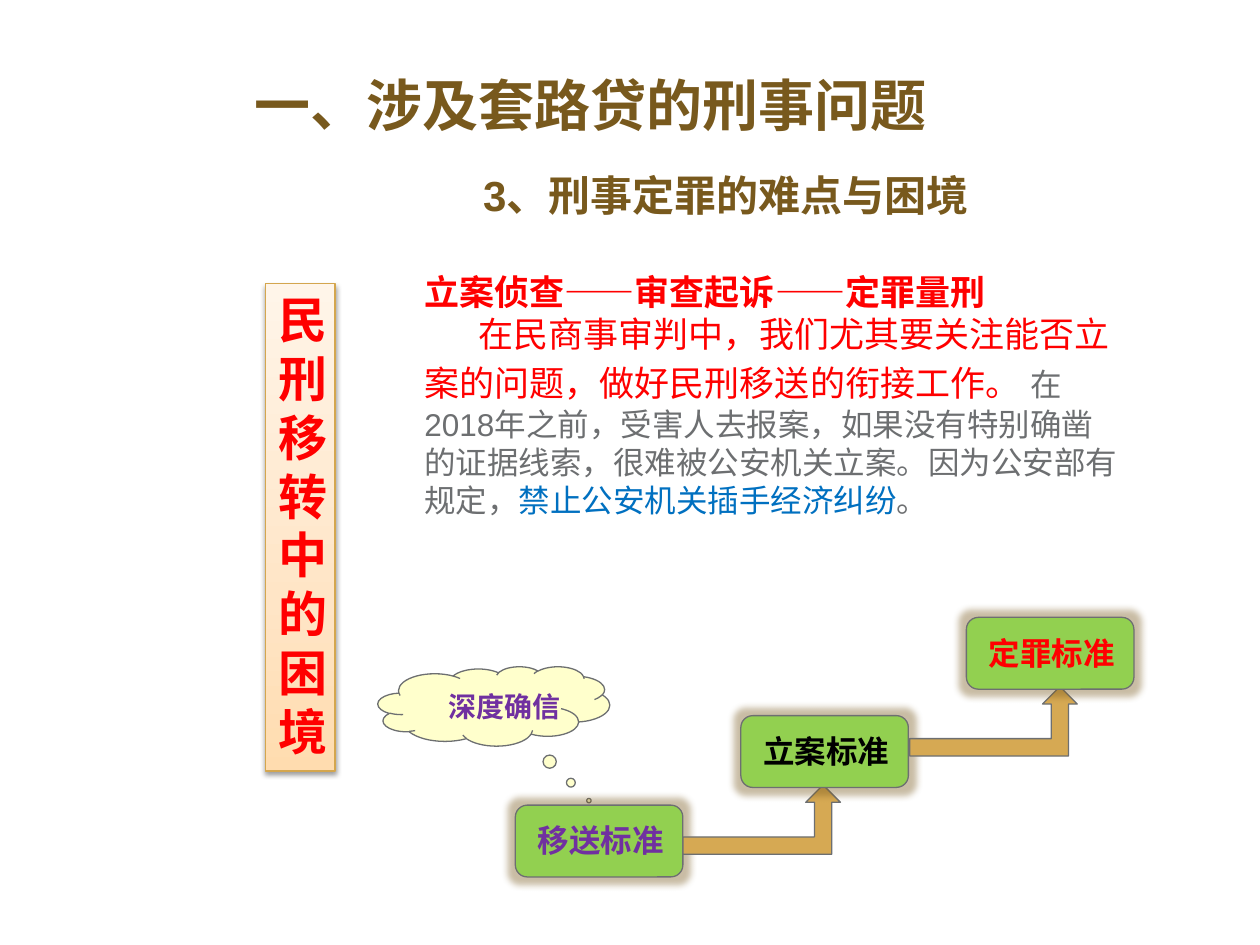
"""Build a slide on the difficulties of criminal conviction in trap-loan cases."""
from lxml import etree
from pptx import Presentation
from pptx.dml.color import RGBColor
from pptx.enum import shapes, text
from pptx.oxml import parse_xml
from pptx.oxml.ns import nsdecls, qn
from pptx.util import Inches, Pt

BROWN = RGBColor(0x78, 0x59, 0x1D)
RED = RGBColor(0xFF, 0, 0)
GRAY = RGBColor(0x6D, 0x6F, 0x71)
BLUE = RGBColor(0, 0x70, 0xC0)
PURPLE = RGBColor(0x70, 0x30, 0xA0)
BLACK = RGBColor(0, 0, 0)
GREEN = RGBColor(0x92, 0xD0, 0x50)
GOLD = RGBColor(0xD6, 0xA9, 0x53)
GOLD_LINE = RGBColor(0xD4, 0xA6, 0x4E)
CREAM = RGBColor(0xFF, 0xFF, 0xCC)

TITLE = "一、涉及套路贷的刑事问题"
SUBTITLE = "3、刑事定罪的难点与困境"
BANNER = "民刑移转中的困境"
THOUGHT = "深度确信"
BODY = [
    [("立案侦查——审查起诉——定罪量刑", 20, RED, True)],
    [
        ("在民商事审判中，我们尤其要关注能否立案的问题，做好民刑移送的衔接工作。", 20, RED, False),
        (" ", 24, GRAY, False),
        ("在2018年之前，受害人去报案，如果没有特别确凿的证据线索，很难被公安机关立案。因为公安部有规定，",
         18, GRAY, False),
        ("禁止公安机关插手经济纠纷", 18, BLUE, False),
        ("。", 18, GRAY, False),
    ],
]
STEPS = [("移送标准", PURPLE, 6.39), ("立案标准", BLACK, 5.68), ("定罪标准", RED, 4.9)]
ARROWS = [(5.42, 6.23, 1.25, 0.55), (7.22, 5.45, 1.33, 0.55)]
STEP_LEFT, STEP_PITCH = 4.09, 1.79
BANNER_STOPS = [(0, "FFDCAF"), (35, "FFE5C6"), (100, "FFF5E9")]


def write(frame, paragraphs, align=text.PP_ALIGN.LEFT, anchor=text.MSO_ANCHOR.TOP, spacing=None):
    frame.word_wrap = True
    frame.auto_size = text.MSO_AUTO_SIZE.NONE
    frame.vertical_anchor = anchor
    for index, runs in enumerate(paragraphs):
        para = frame.add_paragraph() if index else frame.paragraphs[0]
        para.alignment = align
        if spacing:
            para.line_spacing = spacing
        for words, size, color, bold in runs:
            span = para.add_run()
            span.text = words
            span.font.name = "Arial"
            span.font.size = Pt(size)
            span.font.bold = bold
            span.font.color.rgb = color


def add_text(page, place, paragraphs, **options):
    box = page.shapes.add_textbox(*map(Inches, place))
    write(box.text_frame, paragraphs, **options)
    return box


def add_shape(page, kind, place, fill, line=GRAY):
    shape = page.shapes.add_shape(kind, *map(Inches, place))
    shape.shadow.inherit = False
    shape.fill.solid()
    shape.fill.fore_color.rgb = fill
    shape.line.color.rgb = line
    shape.line.width = Pt(0.75)
    return shape


def add_effect(shape, tag, color, alpha, **settings):
    effects = shape._element.spPr.find(qn("a:effectLst"))
    effect = etree.SubElement(effects, qn(tag), {key: str(value) for key, value in settings.items()})
    tint = etree.SubElement(effect, qn("a:srgbClr"), val=color)
    etree.SubElement(tint, qn("a:alpha"), val=str(alpha * 1000))


def set_gradient(shape, stops, angle):
    marks = "".join(f'<a:gs pos="{spot * 1000}"><a:srgbClr val="{color}"/></a:gs>' for spot, color in stops)
    gradient = parse_xml(f'<a:gradFill {nsdecls("a")} rotWithShape="1"><a:gsLst>{marks}</a:gsLst>'
                         f'<a:lin ang="{angle * 60000}" scaled="0"/></a:gradFill>')
    properties = shape._element.spPr
    properties.replace(properties.find(qn("a:solidFill")), gradient)


def add_headings(page):
    title = page.shapes.title
    title.left, title.top, title.width, title.height = map(Inches, (1.92, 0.49, 7.78, 0.66))
    bottom = text.MSO_ANCHOR.BOTTOM
    write(title.text_frame, [[(TITLE, 32, BROWN, True)]], anchor=bottom, spacing=0.9)
    add_text(page, (1.87, 1.14, 7.78, 0.66), [[(SUBTITLE, 24, BROWN, True)]],
             align=text.PP_ALIGN.CENTER, anchor=bottom, spacing=0.9)


def add_banner(page):
    banner = add_shape(page, shapes.MSO_SHAPE.RECTANGLE, (2.11, 2.25, 0.55, 3.87), CREAM, GOLD_LINE)
    set_gradient(banner, BANNER_STOPS, 270)
    add_effect(banner, "a:outerShdw", "000000", 38, blurRad=Pt(3.1), dist=Pt(1.6),
               dir=90 * 60000, rotWithShape=0)
    write(banner.text_frame, [[(BANNER, 28, RED, True)]])


def add_body(page):
    body = add_text(page, (3.27, 2.1, 5.75, 2.09), BODY)
    body.text_frame.paragraphs[1]._p.get_or_add_pPr().set("indent", str(Inches(0.43)))


def add_thought(page):
    cloud = add_shape(page, shapes.MSO_SHAPE.CLOUD_CALLOUT, (3, 5.29, 1.84, 0.63), CREAM)
    cloud.adjustments[0], cloud.adjustments[1] = 0.41, 1.19
    add_text(page, (3.46, 5.42, 1.49, 0.33), [[(THOUGHT, 16, PURPLE, True)]])


def add_staircase(page):
    for index, (label, color, top) in enumerate(STEPS):
        left = STEP_LEFT + index * STEP_PITCH
        if index:
            add_shape(page, shapes.MSO_SHAPE.BENT_UP_ARROW, ARROWS[index - 1], GOLD)
        step = add_shape(page, shapes.MSO_SHAPE.ROUNDED_RECTANGLE, (left, top, 1.33, 0.57), GREEN)
        add_effect(step, "a:glow", "78591D", 40, rad=Pt(8))
        add_text(page, (left + 0.08, top + 0.08, 1.27, 0.4), [[(label, 18, color, True)]])


def main():
    deck = Presentation()
    deck.slide_width, deck.slide_height = Inches(10), Inches(7.5)
    page = deck.slides.add_slide(deck.slide_layouts[5])
    add_headings(page)
    add_banner(page)
    add_body(page)
    add_thought(page)
    add_staircase(page)
    deck.save("out.pptx")


if __name__ == "__main__":
    main()
